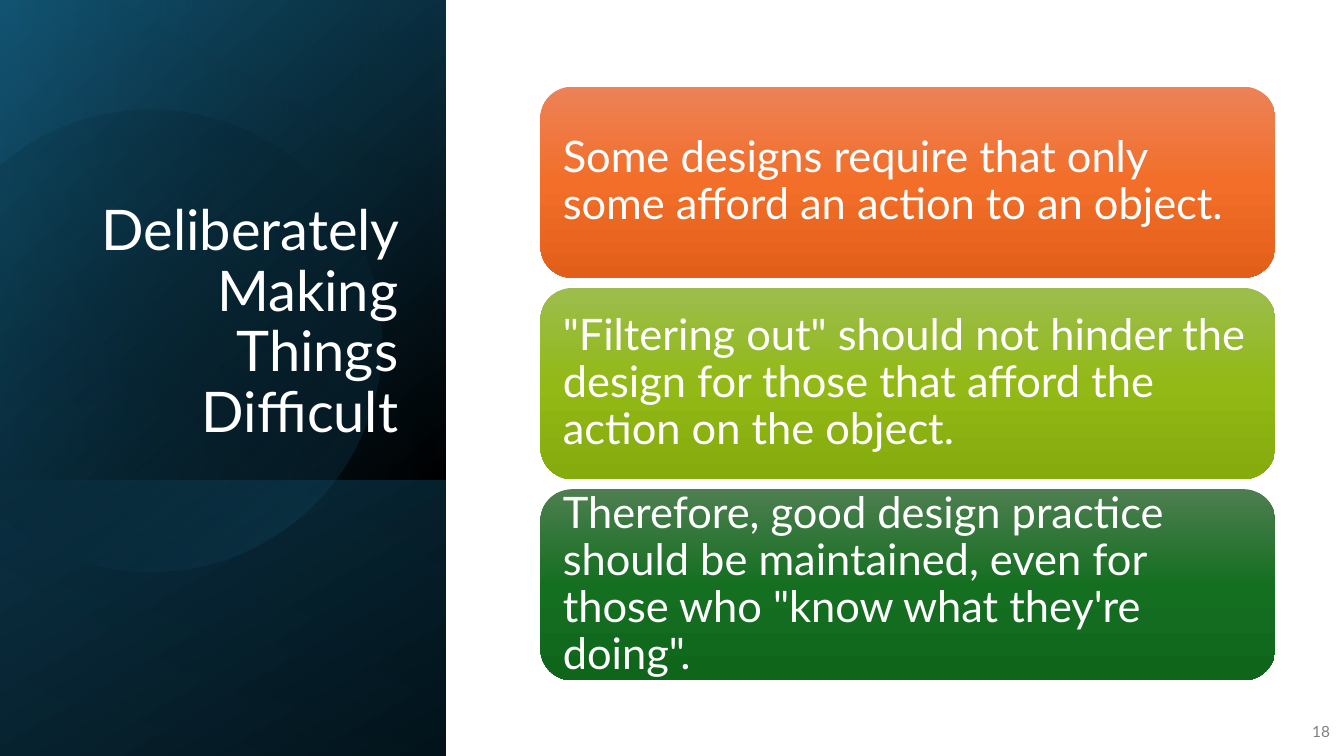
from math import acos, cos, sin

from lxml.etree import SubElement
from pptx import Presentation
from pptx.dml.color import RGBColor
from pptx.enum.shapes import MSO_SHAPE
from pptx.enum.text import MSO_ANCHOR, PP_ALIGN
from pptx.oxml.ns import qn
from pptx.util import Inches, Pt

WIDE, HIGH = 13.33, 7.5
FONT = "Lato"
WHITE = RGBColor(0xFF, 0xFF, 0xFF)
GRAY = RGBColor(0x80, 0x80, 0x80)
BLACK = RGBColor(0x00, 0x00, 0x00)
TEAL = RGBColor(0x15, 0x60, 0x82)
DEEP = RGBColor(0x12, 0x52, 0x70)
NAVY = RGBColor(0x0A, 0x2F, 0x40)
INK = RGBColor(0x02, 0x11, 0x19)
SKY = RGBColor(0x46, 0xB1, 0xE1)

# Each card: text, then the top, middle and bottom shades
CARDS = [
    ("Some designs require that only some afford an action to an object.",
     RGBColor(0xED, 0x82, 0x57), RGBColor(0xF2, 0x6E, 0x29), RGBColor(0xE2, 0x5F, 0x1A)),
    ('"Filtering out" should not hinder the design for those that afford '
     "the action on the object.",
     RGBColor(0x9C, 0xBD, 0x4E), RGBColor(0x92, 0xB9, 0x16), RGBColor(0x85, 0xAB, 0x0D)),
    ("Therefore, good design practice should be maintained, even for those "
     'who "know what they\'re doing".',
     RGBColor(0x4D, 0x7E, 0x50), RGBColor(0x15, 0x6F, 0x21), RGBColor(0x0F, 0x66, 0x1B)),
]


def shade(shape, angle, stops):
    """Fill with (percent, colour, opacity) stops, angle clockwise."""
    shape.shadow.inherit = False
    shape.line.fill.background()
    shape.fill.gradient()
    shape.fill.gradient_angle = 360 - angle
    ramp = shape.element.spPr.find(".//" + qn("a:gsLst"))
    for old in list(ramp):
        ramp.remove(old)
    for place, color, solid in stops:
        stop = SubElement(ramp, qn("a:gs"), pos=str(place * 1000))
        tint = SubElement(stop, qn("a:srgbClr"), val=str(color))
        if solid < 100:
            SubElement(tint, qn("a:alpha"), val=str(solid * 1000))


def block(slide, kind, box):
    return slide.shapes.add_shape(kind, *map(Inches, box))


def write(shape, text, size, color, align, anchor):
    frame = shape.text_frame
    frame.text = text
    frame.word_wrap = True
    frame.vertical_anchor = anchor
    para = frame.paragraphs[0]
    para.alignment = align
    font = para.runs[0].font
    font.name, font.size, font.color.rgb = FONT, Pt(size), color
    return para


def panel(slide, box):
    """Dark panel with layered light, a large disc and the title."""
    left, top, wide, high = box
    base = top + 0.635 * high
    foot = (left, base, wide, top + high - base)
    layers = [
        (box, 50, [(0, DEEP, 100), (76, BLACK, 100)]),
        (box, 0, [(0, TEAL, 20), (100, BLACK, 0)]),
        (foot, 60, [(0, NAVY, 100), (100, INK, 100)]),
        (box, 120, [(0, BLACK, 0), (100, SKY, 3)]),
    ]
    for area, angle, stops in layers:
        shade(block(slide, MSO_SHAPE.RECTANGLE, area), angle, stops)

    # Disc cut off by the panel's left edge
    radius, mid_x, mid_y = 2.29, left + 1.49, top + 0.45 * high
    limit = acos((left - mid_x) / radius)
    steps = 120
    turns = [limit * (2 * i / steps - 1) for i in range(steps + 1)]
    rim = [(Inches(mid_x + radius * cos(t)), Inches(mid_y + radius * sin(t)))
           for t in turns]
    pen = slide.shapes.build_freeform(*rim[0])
    pen.add_line_segments(rim[1:], close=True)
    shade(pen.convert_to_shape(), 45, [(20, BLACK, 8), (100, TEAL, 30)])

    # Title, brought in front of the panel
    title = slide.shapes.title
    title.left, title.top = Inches(left + 0.64), Inches(top + 1.84)
    title.width, title.height = Inches(3.41), Inches(2.62)
    para = write(title, "Deliberately Making Things Difficult", 40, WHITE,
                 PP_ALIGN.RIGHT, MSO_ANCHOR.BOTTOM)
    para.line_spacing = 0.9
    slide.shapes.element.append(title.element)


def stack(slide, box):
    """Equal rounded cards, one above the other."""
    left, top, wide, high = box
    gap = 0.1
    tall = (high - gap * (len(CARDS) - 1)) / len(CARDS)
    for row, (text, light, main, dark) in enumerate(CARDS):
        spot = (left, top + row * (tall + gap), wide, tall)
        card = block(slide, MSO_SHAPE.ROUNDED_RECTANGLE, spot)
        shade(card, 90, [(0, light, 100), (50, main, 100), (100, dark, 100)])
        para = write(card, text, 31, WHITE, PP_ALIGN.LEFT, MSO_ANCHOR.MIDDLE)
        para.line_spacing = 0.9
        frame = card.text_frame
        frame.margin_left = frame.margin_right = Inches(0.13)
        frame.margin_top = frame.margin_bottom = 0


def number(slide, box):
    """Page number in the corner."""
    label = slide.shapes.add_textbox(*map(Inches, box))
    write(label, "18", 11, GRAY, PP_ALIGN.RIGHT, MSO_ANCHOR.MIDDLE)


def main():
    deck = Presentation()
    deck.slide_width, deck.slide_height = Inches(WIDE), Inches(HIGH)
    slide = deck.slides.add_slide(deck.slide_layouts[5])
    panel(slide, (0, 0, 4.42, HIGH))
    stack(slide, (5.36, 0.86, 7.29, 5.89))
    number(slide, (12.8, 7.06, 0.49, 0.4))
    deck.save("out.pptx")


if __name__ == "__main__":
    main()
